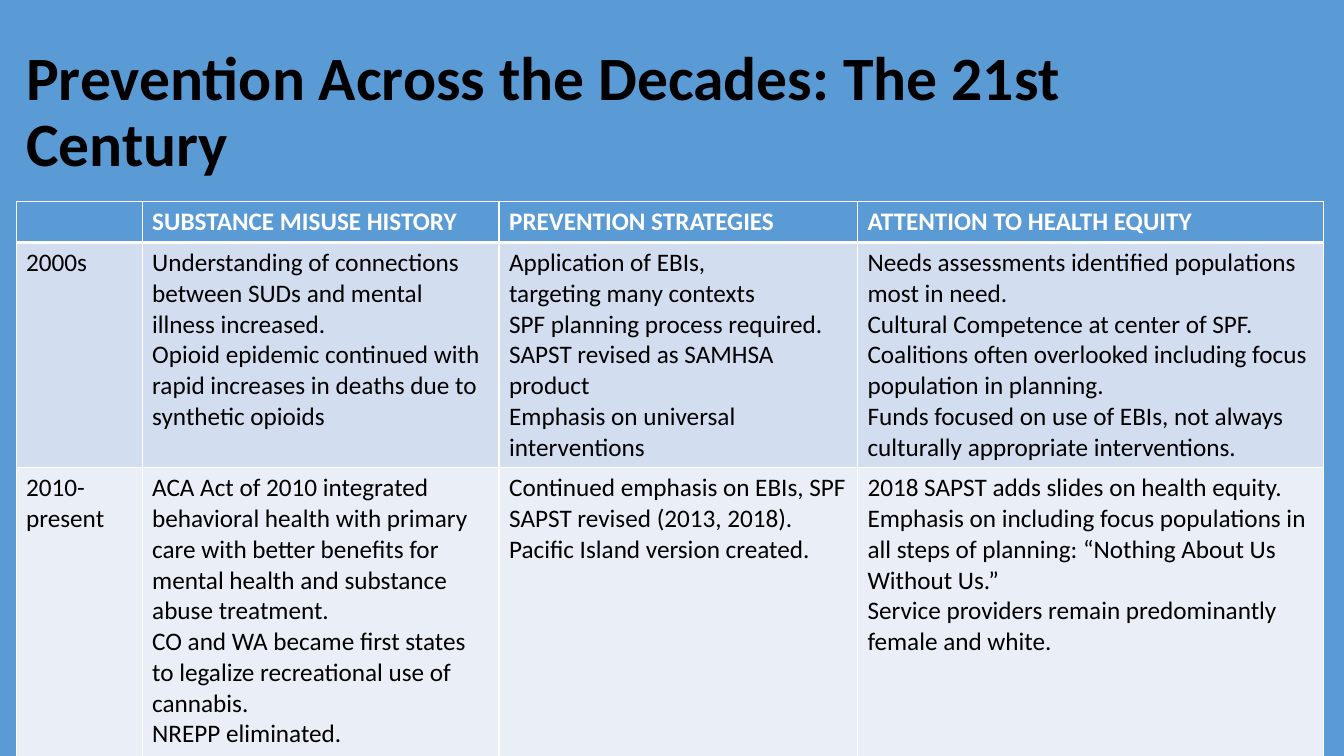
from dataclasses import dataclass

from lxml import etree
from pptx import Presentation
from pptx import util as u
from pptx.dml import color
from pptx.enum import text
from pptx.oxml import ns

FONT = "Calibri"
BLUE, WHITE, BLACK = "5B9BD5", "FFFFFF", "000000"
COLUMN_WIDTHS = (90, 255, 256, 333)


@dataclass(frozen=True)
class TableRow:
    height: float
    fill: str
    color: str
    bold: bool
    top_line: float
    bottom_line: float
    cells: tuple[str, ...]


ROWS = (
    TableRow(29.2, BLUE, WHITE, True, 1, 3, (
        "",
        "SUBSTANCE MISUSE HISTORY",
        "PREVENTION STRATEGIES",
        "ATTENTION TO HEALTH EQUITY",
    )),
    TableRow(161, "D2DEEF", BLACK, False, 3, 1, (
        "2000s",
        "Understanding of connections between SUDs and mental illness increased.\n"
        "Opioid epidemic continued with rapid increases in deaths due to synthetic opioids",
        "Application of EBIs,\n"
        "targeting many contexts\n"
        "SPF planning process required.\n"
        "SAPST revised as SAMHSA product\n"
        "Emphasis on universal interventions",
        "Needs assessments identified populations most in need.\n"
        "Cultural Competence at center of SPF.\n"
        "Coalitions often overlooked including focus population in planning.\n"
        "Funds focused on use of EBIs, not always culturally appropriate interventions.",
    )),
    TableRow(221, "EAEFF7", BLACK, False, 1, 1, (
        "2010-present",
        "ACA Act of 2010 integrated behavioral health with primary care with better "
        "benefits for mental health and substance abuse treatment.\n"
        "CO and WA became first states to legalize recreational use of cannabis.\n"
        "NREPP eliminated.",
        "Continued emphasis on EBIs, SPF\n"
        "SAPST revised (2013, 2018). Pacific Island version created.",
        "2018 SAPST adds slides on health equity.\n"
        "Emphasis on including focus populations in all steps of planning: "
        "“Nothing About Us Without Us.”\n"
        "Service providers remain predominantly female and white.",
    )),
)


def paint(target, hex_color: str) -> None:
    if hasattr(target, "solid"):
        target.solid()
        target = target.fore_color
    target.rgb = color.RGBColor.from_string(hex_color)


def write(frame, content: str, size: float, hex_color: str, bold: bool) -> None:
    frame.text = content
    for paragraph in frame.paragraphs:
        paragraph.font.size = u.Pt(size)
        for run in paragraph.runs:
            run.font.name = FONT
            run.font.size = u.Pt(size)
            run.font.bold = bold
            paint(run.font.color, hex_color)


def add_border(cell, side: str, width: float) -> None:
    properties = cell._tc.get_or_add_tcPr()
    line = etree.SubElement(properties, ns.qn(f"a:ln{side}"), w=str(u.Pt(width)))
    fill = etree.SubElement(line, ns.qn("a:solidFill"))
    etree.SubElement(fill, ns.qn("a:srgbClr"), val=WHITE)


def add_title(slide) -> None:
    box = slide.shapes.add_textbox(u.Pt(11.5), u.Pt(28.8), u.Pt(882), u.Pt(104.4))
    frame = box.text_frame
    frame.word_wrap = True
    frame.vertical_anchor = text.MSO_ANCHOR.MIDDLE
    write(frame, "Prevention Across the Decades: The 21st Century", 44, BLACK, True)
    frame.paragraphs[0].line_spacing = 0.9


def add_decades_table(slide) -> None:
    shape = slide.shapes.add_table(
        len(ROWS), len(COLUMN_WIDTHS), u.Pt(11.5), u.Pt(144),
        u.Pt(sum(COLUMN_WIDTHS)), u.Pt(sum(row.height for row in ROWS)))
    table = shape.table
    for column, width in zip(table.columns, COLUMN_WIDTHS):
        column.width = u.Pt(width)
    for table_row, row in zip(table.rows, ROWS):
        table_row.height = u.Pt(row.height)
        borders = {"L": 1, "R": 1, "T": row.top_line, "B": row.bottom_line}
        for cell, content in zip(table_row.cells, row.cells):
            write(cell.text_frame, content, 18, row.color, row.bold)
            for side, width in borders.items():
                add_border(cell, side, width)
            paint(cell.fill, row.fill)


def main() -> None:
    presentation = Presentation()
    presentation.slide_width = u.Pt(960)
    presentation.slide_height = u.Pt(540)
    slide = presentation.slides.add_slide(presentation.slide_layouts[6])
    paint(slide.background.fill, BLUE)
    add_title(slide)
    add_decades_table(slide)
    presentation.save("out.pptx")


if __name__ == "__main__":
    main()
